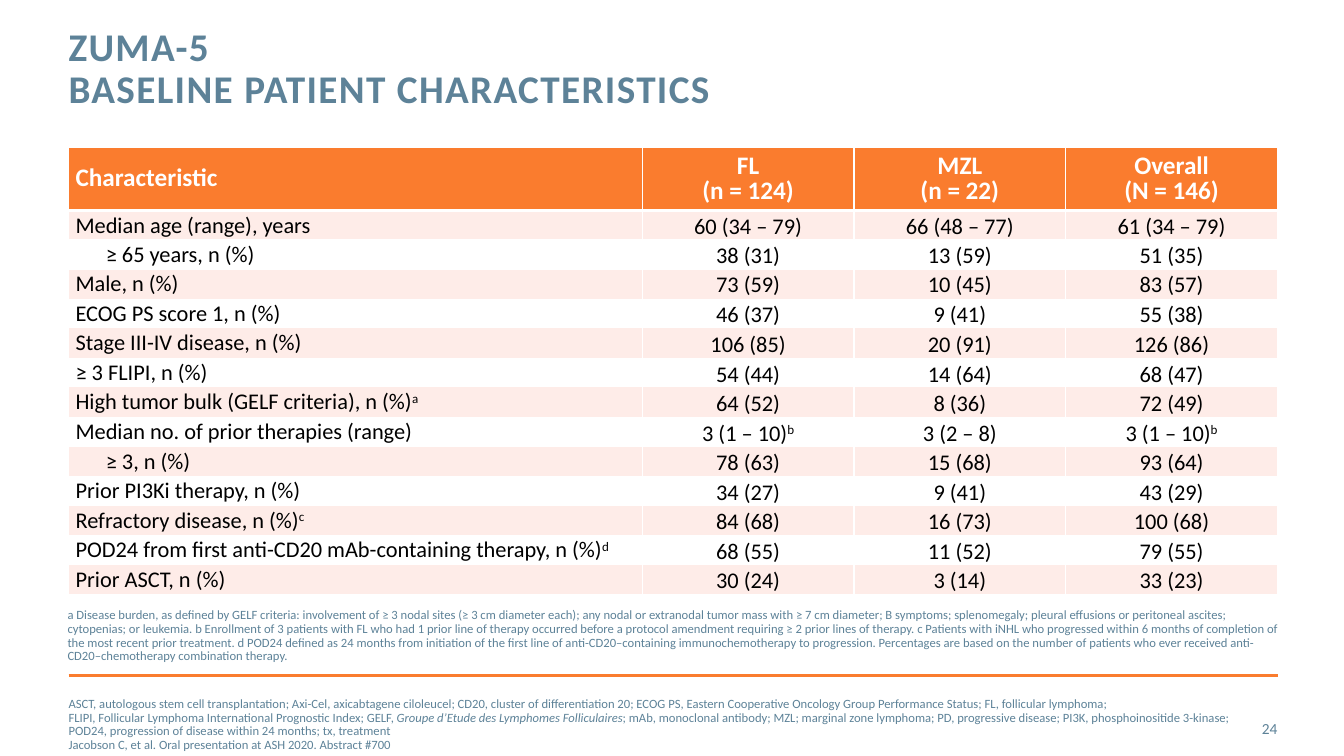
from dataclasses import dataclass

from lxml import etree
from pptx import Presentation
from pptx import util as u
from pptx.dml.color import RGBColor
from pptx.enum import shapes, text
from pptx.oxml import ns


@dataclass(frozen=True)
class Theme:
    face: str = "Calibri"
    slate: str = "5D8298"
    orange: str = "FA7C2E"
    blush: str = "FEECE8"
    white: str = "FFFFFF"
    black: str = "000000"
    title: float = 28
    head: float = 18
    body: float = 16
    note: float = 9
    page: float = 11


THEME = Theme()
LEFT, CENTER, RIGHT = text.PP_ALIGN.LEFT, text.PP_ALIGN.CENTER, text.PP_ALIGN.RIGHT
TOP, MIDDLE = text.MSO_ANCHOR.TOP, text.MSO_ANCHOR.MIDDLE
PLAIN = "{2D5ABB26-0587-4C30-8999-92F81FD0307C}"  # table style without grid

# A trailing ^x is a superscript note mark; a leading > indents the label.
HEADS = ["Characteristic", "FL\n(n = 124)", "MZL\n(n = 22)", "Overall\n(N = 146)"]
ROWS = [
    ["Median age (range), years", "60 (34 – 79)", "66 (48 – 77)", "61 (34 – 79)"],
    [">≥ 65 years, n (%)", "38 (31)", "13 (59)", "51 (35)"],
    ["Male, n (%)", "73 (59)", "10 (45)", "83 (57)"],
    ["ECOG PS score 1, n (%)", "46 (37)", "9 (41)", "55 (38)"],
    ["Stage III-IV disease, n (%)", "106 (85)", "20 (91)", "126 (86)"],
    ["≥ 3 FLIPI, n (%)", "54 (44)", "14 (64)", "68 (47)"],
    ["High tumor bulk (GELF criteria), n (%)^a", "64 (52)", "8 (36)", "72 (49)"],
    ["Median no. of prior therapies (range)", "3 (1 – 10)^b", "3 (2 – 8)", "3 (1 – 10)^b"],
    [">≥ 3, n (%)", "78 (63)", "15 (68)", "93 (64)"],
    ["Prior PI3Ki therapy, n (%)", "34 (27)", "9 (41)", "43 (29)"],
    ["Refractory disease, n (%)^c", "84 (68)", "16 (73)", "100 (68)"],
    ["POD24 from first anti-CD20 mAb-containing therapy, n (%)^d",
     "68 (55)", "11 (52)", "79 (55)"],
    ["Prior ASCT, n (%)", "30 (24)", "3 (14)", "33 (23)"],
]
NOTES = (
    "a Disease burden, as defined by GELF criteria: involvement of ≥ 3 nodal sites "
    "(≥ 3 cm diameter each); any nodal or extranodal tumor mass with ≥ 7 cm diameter; "
    "B symptoms; splenomegaly; pleural effusions or peritoneal ascites; cytopenias; or "
    "leukemia. b Enrollment of 3 patients with FL who had 1 prior line of therapy occurred "
    "before a protocol amendment requiring ≥ 2 prior lines of therapy. c Patients with iNHL "
    "who progressed within 6 months of completion of the most recent prior treatment. "
    "d POD24 defined as 24 months from initiation of the first line of anti-CD20–containing "
    "immunochemotherapy to progression. Percentages are based on the number of patients who "
    "ever received anti-CD20–chemotherapy combination therapy."
)
# Text between asterisks is italic.
TERMS = [
    "ASCT, autologous stem cell transplantation; Axi-Cel, axicabtagene ciloleucel; CD20, "
    "cluster of differentiation 20; ECOG PS, Eastern Cooperative Oncology Group Performance "
    "Status; FL, follicular lymphoma;",
    "FLIPI, Follicular Lymphoma International Prognostic Index; GELF, *Groupe d’Etude des "
    "Lymphomes Folliculaires*; mAb, monoclonal antibody; MZL; marginal zone lymphoma; PD, "
    "progressive disease; PI3K, phosphoinositide 3-kinase; POD24, progression of disease "
    "within 24 months; tx, treatment",
    "Jacobson C, et al. Oral presentation at ASH 2020. Abstract #700",
]


def style(run, size, color, bold=False):
    font = run.font
    font.name, font.size, font.bold = THEME.face, u.Pt(size), bold
    font.color.rgb = RGBColor.from_string(color)


def write(frame, lines, size, color, bold=False, align=LEFT, gap=None):
    """Fill a text frame, one paragraph a line."""
    frame.text = "\n".join(line.split("*")[0].split("^")[0] for line in lines)
    for par, line in zip(frame.paragraphs, lines):
        par.alignment, par.line_spacing = align, gap
        for i, part in enumerate(line.split("*")[1:]):
            run = par.add_run()
            run.text, run.font.italic = part, i % 2 == 0
        for mark in line.split("^")[1:]:
            run = par.add_run()
            run.text = mark
            run.font._element.set("baseline", "30000")
        for run in par.runs:
            style(run, size, color, bold)


def add_text(slide, box, lines, size, anchor=TOP, **look):
    frame = slide.shapes.add_textbox(*map(u.Inches, box)).text_frame
    frame.word_wrap, frame.vertical_anchor = True, anchor
    frame.margin_left = frame.margin_right = frame.margin_top = frame.margin_bottom = 0
    write(frame, lines, size, THEME.slate, **look)
    return frame


def add_title(slide, box):
    frame = add_text(slide, box, ["ZUMA-5", "BASELINE PATIENT CHARACTERISTICS"],
                     THEME.title, bold=True, gap=u.Pt(30))
    for par in frame.paragraphs:
        par.runs[0].font._element.set("spc", "100")


def add_edge(cell, side, width):
    line = etree.SubElement(cell._tc.get_or_add_tcPr(), ns.qn("a:ln" + side),
                            w=str(u.Pt(width)))
    fill = etree.SubElement(line, ns.qn("a:solidFill"))
    etree.SubElement(fill, ns.qn("a:srgbClr"), val=THEME.white)


def fill_cell(cell, row, col, words):
    head = row == 0
    cell.margin_left = cell.margin_right = u.Inches(0.07)
    cell.margin_top = cell.margin_bottom = 0
    cell.vertical_anchor = MIDDLE if head or col == 0 else TOP
    # White borders go in ahead of the fill
    if col > 0:
        add_edge(cell, "L", 1)
    if col < len(HEADS) - 1:
        add_edge(cell, "R", 1)
    if row == 1:
        add_edge(cell, "T", 2.25)
    if head:
        add_edge(cell, "B", 2.25)
    cell.fill.solid()
    tint = THEME.orange if head else THEME.blush if row % 2 else THEME.white
    cell.fill.fore_color.rgb = RGBColor.from_string(tint)
    # Text
    align = CENTER if col else LEFT
    if head:
        write(cell.text_frame, words.split("\n"), THEME.head, THEME.white, True, align, 0.8)
    else:
        gap = 1.0 if col == 0 else 1.07 if row in (2, 3) else 1.1
        write(cell.text_frame, [words.lstrip(">")], THEME.body, THEME.black,
              align=align, gap=gap)
    if words.startswith(">"):
        props = cell.text_frame.paragraphs[0]._p.get_or_add_pPr()
        props.set("marL", str(u.Inches(0.3)))
        props.set("indent", "0")


def add_grid(slide, box):
    data = [HEADS] + ROWS
    wide, tall, top = 5.69, box[3], 0.62
    table = slide.shapes.add_table(len(data), len(HEADS), *map(u.Inches, box)).table
    table._tbl.tblPr.find(ns.qn("a:tableStyleId")).text = PLAIN
    for i, col in enumerate(table.columns):
        col.width = u.Inches((box[2] - wide) / (len(HEADS) - 1) if i else wide)
    for i, row in enumerate(table.rows):
        row.height = u.Inches((tall - top) / len(ROWS) if i else top)
    for i, row in enumerate(data):
        for j, words in enumerate(row):
            fill_cell(table.cell(i, j), i, j, words)


def add_foot(slide, box):
    left, top, width, height = box
    # Rule
    rule = slide.shapes.add_connector(
        shapes.MSO_CONNECTOR.STRAIGHT, u.Inches(left), u.Inches(top),
        u.Inches(left + width), u.Inches(top))
    rule.line.color.rgb = RGBColor.from_string(THEME.orange)
    rule.line.width = u.Pt(2)
    etree.SubElement(rule._element.spPr, ns.qn("a:effectLst"))
    # Abbreviations and page number
    add_text(slide, (left, top + 0.22, 11.64, height - 0.22), TERMS, THEME.note, gap=0.9)
    add_text(slide, (left + width - 0.87, top + 0.33, 0.86, 0.4), ["24"], THEME.page,
             anchor=MIDDLE, align=RIGHT)


def main():
    deck = Presentation()
    deck.slide_width, deck.slide_height = u.Inches(13.33), u.Inches(7.5)
    slide = deck.slides.add_slide(deck.slide_layouts[6])
    add_title(slide, (0.68, 0.27, 9.56, 0.88))
    add_grid(slide, (0.68, 1.47, 11.99, 4.4))
    add_text(slide, (0.67, 6.04, 12, 0.6), [NOTES], THEME.note, gap=0.9)
    add_foot(slide, (0.68, 6.7, 12, 0.8))
    deck.save("out.pptx")


if __name__ == "__main__":
    main()
